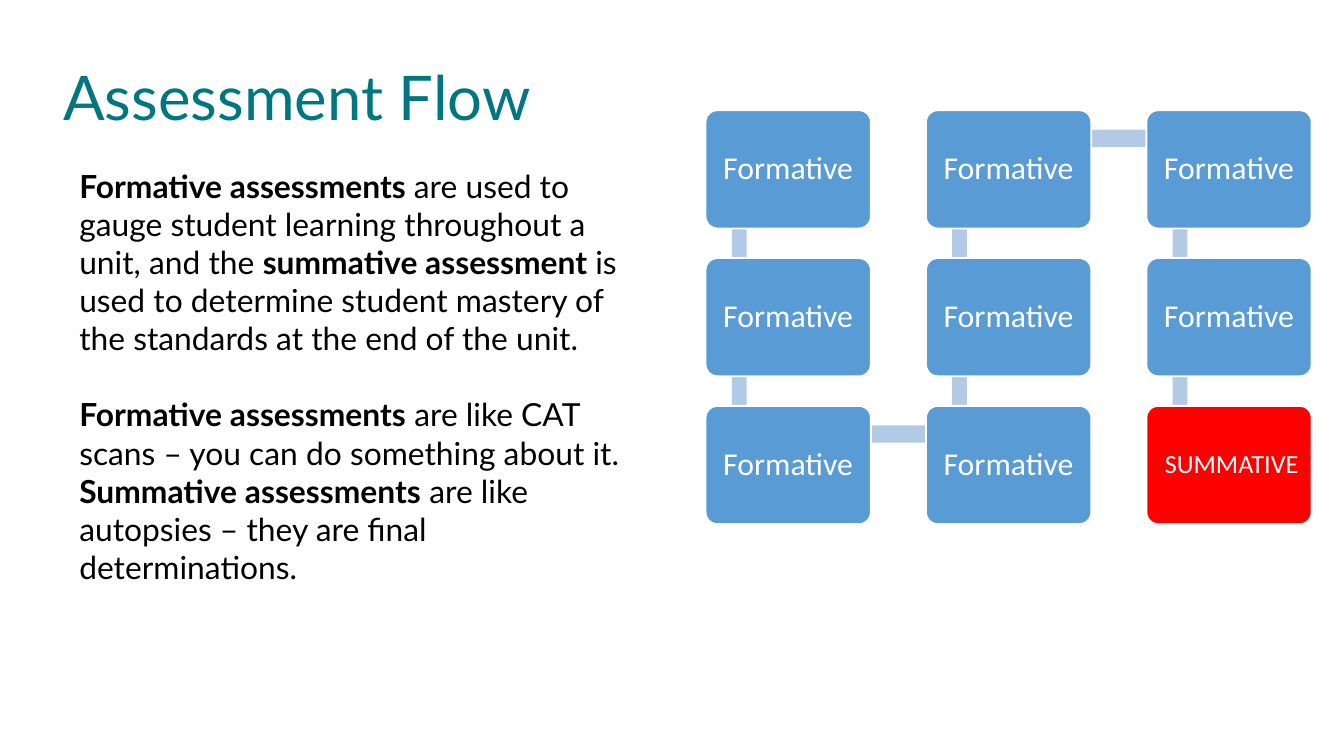
from dataclasses import dataclass

from pptx import Presentation
from pptx.dml.color import RGBColor
from pptx.enum.shapes import MSO_SHAPE
from pptx.enum.text import MSO_ANCHOR, PP_ALIGN
from pptx.util import Inches, Pt

RECTANGLE = MSO_SHAPE.RECTANGLE
ROUNDED = MSO_SHAPE.ROUNDED_RECTANGLE
MIDDLE = MSO_ANCHOR.MIDDLE
TOP = MSO_ANCHOR.TOP
LEFT = PP_ALIGN.LEFT
CENTER = PP_ALIGN.CENTER

TEAL = RGBColor(0x00, 0x77, 0x80)
BLUE = RGBColor(0x59, 0x9B, 0xD5)
PALE_BLUE = RGBColor(0xB3, 0xCA, 0xE7)
RED = RGBColor(0xFF, 0x00, 0x00)
WHITE = RGBColor(0xFF, 0xFF, 0xFF)
BLACK = RGBColor(0x00, 0x00, 0x00)

GRID_LEFT, GRID_TOP = 5.25, 0.82
COLUMN_PITCH, ROW_PITCH = 1.64, 1.1
BOX_WIDTH, BOX_HEIGHT = 1.23, 0.88
LINK_INSET_X, LINK_INSET_Y = 0.25, 0.21
VERTICAL_LINK_WIDTH, HORIZONTAL_LINK_HEIGHT = 0.11, 0.13


@dataclass(frozen=True)
class Step:
    column: int
    row: int
    label: str = "Formative"
    size: int = 17
    fill: RGBColor = BLUE
    left_inset: float = 0.08
    right_inset: float = 0.08

    @property
    def left(self) -> float:
        return GRID_LEFT + self.column * COLUMN_PITCH

    @property
    def top(self) -> float:
        return GRID_TOP + self.row * ROW_PITCH


@dataclass(frozen=True)
class Passage:
    runs: tuple[tuple[str, bool], ...]
    space_before: float = 0


STEPS = [
    Step(0, 0), Step(0, 1), Step(0, 2),
    Step(1, 2), Step(1, 1), Step(1, 0),
    Step(2, 0), Step(2, 1),
    Step(2, 2, "SUMMATIVE", 14, RED, 0.09, 0.05),
]

PASSAGES = [
    Passage((
        ("Formative assessments ", True),
        ("are used to gauge student learning throughout a unit, and the ", False),
        ("summative assessment ", True),
        ("is used to determine student mastery of the standards at the end of the unit.", False),
    )),
    Passage((
        ("Formative assessments", True),
        (" are like CAT scans – you can do something about it.", False),
    ), space_before=20.4),
    Passage((
        ("Summative assessments", True),
        (" are like autopsies – they are final determinations.", False),
    )),
]


def set_frame(frame, anchor, left: float, top: float, right: float) -> None:
    frame.word_wrap = True
    frame.vertical_anchor = anchor
    frame.margin_left, frame.margin_right = Inches(left), Inches(right)
    frame.margin_top = frame.margin_bottom = Inches(top)


def set_font(paragraph, name: str, size: float, color: RGBColor) -> None:
    paragraph.font.name = name
    paragraph.font.size = Pt(size)
    paragraph.font.color.rgb = color


def add_box(slide, kind, left: float, top: float, width: float, height: float, fill: RGBColor):
    shape = slide.shapes.add_shape(kind, Inches(left), Inches(top), Inches(width), Inches(height))
    shape.shadow.inherit = False
    shape.fill.solid()
    shape.fill.fore_color.rgb = fill
    shape.line.fill.background()
    return shape


def add_link(slide, start: Step, end: Step) -> None:
    left = min(start.left, end.left) + LINK_INSET_X
    top = min(start.top, end.top) + LINK_INSET_Y
    if start.column == end.column:
        add_box(slide, RECTANGLE, left - VERTICAL_LINK_WIDTH / 2, top,
                VERTICAL_LINK_WIDTH, ROW_PITCH, PALE_BLUE)
    else:
        add_box(slide, RECTANGLE, left, top - HORIZONTAL_LINK_HEIGHT / 2,
                COLUMN_PITCH, HORIZONTAL_LINK_HEIGHT, PALE_BLUE)


def add_step(slide, step: Step) -> None:
    shape = add_box(slide, ROUNDED, step.left, step.top, BOX_WIDTH, BOX_HEIGHT, step.fill)
    shape.adjustments[0] = 0.1
    shape.line.color.rgb = WHITE
    shape.line.width = Pt(1)
    set_frame(shape.text_frame, MIDDLE, step.left_inset, 0.1, step.right_inset)
    paragraph = shape.text_frame.paragraphs[0]
    paragraph.text = step.label
    paragraph.alignment = CENTER
    paragraph.line_spacing = 0.9
    set_font(paragraph, "Calibri", step.size, WHITE)


def add_title(slide) -> None:
    title = slide.shapes.title
    title.left, title.top = Inches(0.4), Inches(0.2)
    title.width, title.height = Inches(8.62), Inches(1.09)
    set_frame(title.text_frame, MIDDLE, 0.07, 0.04, 0.07)
    paragraph = title.text_frame.paragraphs[0]
    paragraph.text = "Assessment Flow"
    paragraph.alignment = LEFT
    paragraph.line_spacing = 0.9
    set_font(paragraph, "Lato", 33, TEAL)


def add_explanation(slide, passages: list[Passage]) -> None:
    box = slide.shapes.add_textbox(Inches(0.52), Inches(1.2), Inches(4.37), Inches(3.38))
    frame = box.text_frame
    set_frame(frame, TOP, 0.07, 0.04, 0.07)
    for index, passage in enumerate(passages):
        paragraph = frame.add_paragraph() if index else frame.paragraphs[0]
        paragraph.space_before = Pt(passage.space_before)
        set_font(paragraph, "Lato", 17, BLACK)
        for text, bold in passage.runs:
            run = paragraph.add_run()
            run.text = text
            run.font.bold = bold


def main() -> None:
    presentation = Presentation()
    presentation.slide_width = Inches(10)
    presentation.slide_height = presentation.slide_width * 9 // 16
    slide = presentation.slides.add_slide(presentation.slide_layouts[5])
    add_title(slide)
    for start, end in zip(STEPS, STEPS[1:]):
        add_link(slide, start, end)
    for step in STEPS:
        add_step(slide, step)
    add_explanation(slide, PASSAGES)
    presentation.save("out.pptx")


if __name__ == "__main__":
    main()
